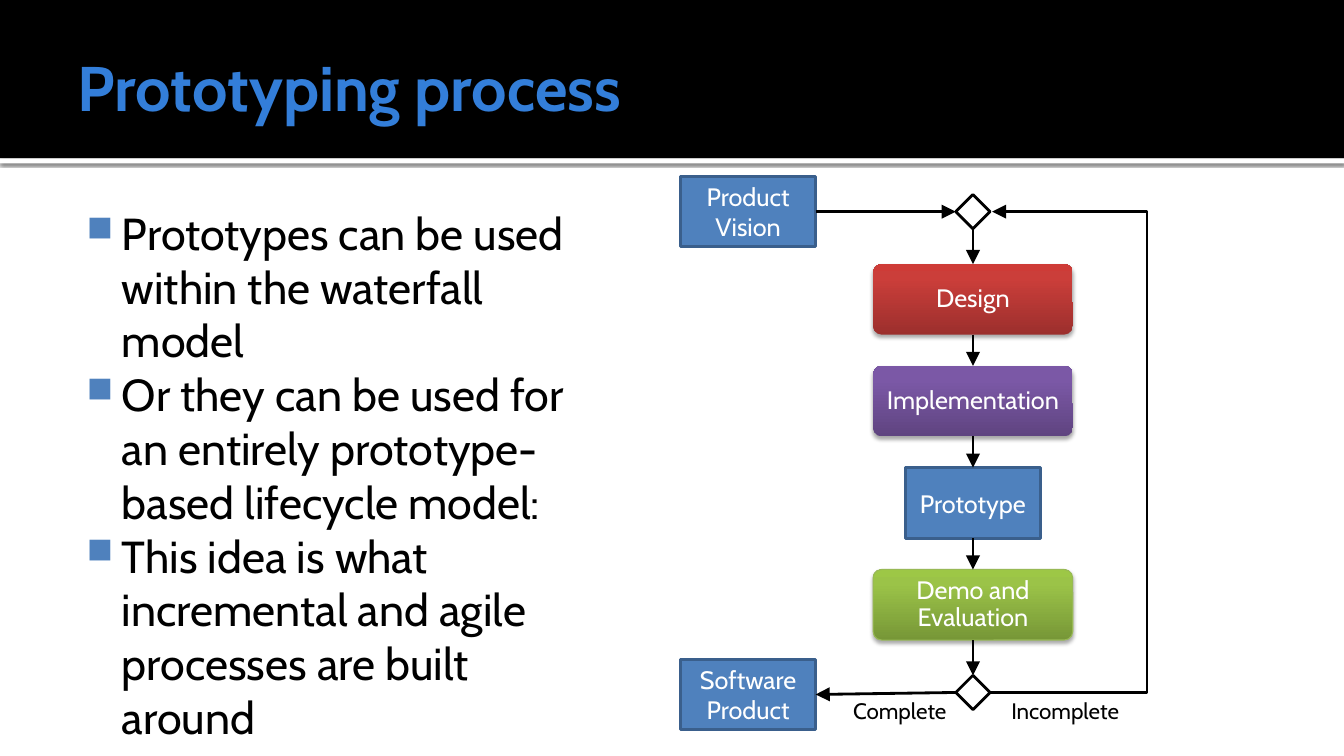
"""Build the prototyping process slide."""
import copy
import lxml.etree
import pptx
import pptx.dml.color
import pptx.enum.shapes
import pptx.enum.text
import pptx.oxml.ns
import pptx.util

RGB = pptx.dml.color.RGBColor
KIND = pptx.enum.shapes.MSO_SHAPE
LINK = pptx.enum.shapes.MSO_CONNECTOR
ALIGN = pptx.enum.text.PP_ALIGN
MIDDLE = pptx.enum.text.MSO_ANCHOR.MIDDLE
qn = pptx.oxml.ns.qn

BLACK = RGB(0, 0, 0)
WHITE = RGB(255, 255, 255)
TITLE = RGB(0x33, 0x7E, 0xD9)
BLUE = RGB(0x4F, 0x81, 0xBD)
NAVY = RGB(0x3A, 0x5F, 0x8C)
LIME = RGB(0x98, 0xB9, 0x55)
REDS = RGB(0x9C, 0x2F, 0x2D), RGB(0xCB, 0x3E, 0x3A), RGB(0xCE, 0x3B, 0x37)
PLUMS = RGB(0x5F, 0x44, 0x80), RGB(0x7B, 0x58, 0xA6), RGB(0x7C, 0x57, 0xA8)
GREENS = RGB(0x77, 0x97, 0x37), RGB(0x9B, 0xC3, 0x48), RGB(0x9D, 0xC7, 0x46)

SCALE = 9144
FONT = "Cabin"
MID = 965
TOP = 262
PITCH = 101
HIGH = 70
TOP_SIDE, LEFT, BOTTOM, RIGHT = range(4)
POINTS = [
    "Prototypes can be used within the waterfall model",
    "Or they can be used for an entirely prototype-based lifecycle model:",
    "This idea is what incremental and agile processes are built around",
]


def px(*sizes):
    """Turn px lengths into EMU."""
    return [size * SCALE for size in sizes]


def add_node(root, tag, **attrs):
    """Append a drawing element with the given attributes."""
    node = lxml.etree.SubElement(root, qn(tag))
    for key, value in attrs.items():
        node.set(key, str(value))
    return node


def add_run(para, text, size, color, bold=False):
    """Add one styled run to a paragraph."""
    run = para.add_run()
    run.text = text
    run.font.name = FONT
    run.font.size = pptx.util.Pt(size)
    run.font.bold = bold
    run.font.color.rgb = color


def fill_text(frame, lines, size, color, align=ALIGN.CENTER):
    """Write one paragraph per line and return the paragraphs."""
    frame.word_wrap = True
    for count, line in enumerate(lines):
        para = frame.add_paragraph() if count else frame.paragraphs[0]
        para.alignment = align
        add_run(para, line, size, color)
    return frame.paragraphs


def add_shadow(shape, alpha, blur, dist):
    """Give a shape a soft shadow that falls downward."""
    effects = shape._element.spPr.find(qn("a:effectLst"))
    outer = add_node(effects, "a:outerShdw", blurRad=pptx.util.Pt(blur),
                     dist=pptx.util.Pt(dist), dir=5400000, algn="ctr", rotWithShape=0)
    color = add_node(outer, "a:srgbClr", val=BLACK)
    add_node(color, "a:alpha", val=alpha * 1000)


def add_box(slide, kind, place, fill, line=None, width=2):
    """Add a flat preset shape."""
    box = slide.shapes.add_shape(kind, *px(*place))
    box.shadow.inherit = False
    box.fill.solid()
    box.fill.fore_color.rgb = fill
    if line is None:
        box.line.fill.background()
    else:
        box.line.color.rgb = line
        box.line.width = pptx.util.Pt(width)
    return box


def add_item(slide, x, y, lines):
    """Add a blue box for a product or prototype."""
    box = add_box(slide, KIND.RECTANGLE, (x, y, 134, HIGH), BLUE, NAVY)
    box.text_frame.vertical_anchor = MIDDLE
    fill_text(box.text_frame, lines, 18, WHITE)
    return box


def add_step(slide, row, text, tones, line=None):
    """Add a shaded, rounded box for a process step."""
    box = add_box(slide, KIND.ROUNDED_RECTANGLE,
                  (MID - 99, TOP + row * PITCH, 198, HIGH), tones[0], line, 0.75)
    box.adjustments[0] = 0.12
    box.fill.gradient()
    box.fill.gradient_angle = 90
    stops = box._element.spPr.find(".//" + qn("a:gsLst"))
    stops.append(copy.deepcopy(stops[-1]))
    for stop, tone, place in zip(box.fill.gradient_stops, tones, (0, 0.8, 1)):
        stop.color.rgb = tone
        stop.position = place
    add_shadow(box, 35, 3.1, 1.8)
    frame = box.text_frame
    frame.vertical_anchor = MIDDLE
    frame.margin_left = frame.margin_right = 6 * SCALE
    frame.margin_top = frame.margin_bottom = 6 * SCALE
    fill_text(frame, [text], 18, WHITE)[0].line_spacing = 0.9
    return box


def add_gate(slide, y):
    """Add a white decision diamond."""
    return add_box(slide, KIND.FLOWCHART_DECISION, (MID - 17, y, 34, 34), WHITE, BLACK)


def add_arrow(slide, kind, ends):
    """Add a black connector with an arrowhead."""
    arrow = slide.shapes.add_connector(kind, *px(*ends))
    arrow.line.color.rgb = BLACK
    arrow.line.width = pptx.util.Pt(2)
    add_node(arrow.line._get_or_add_ln(), "a:tailEnd", type="triangle", w="lg", len="lg")
    add_node(arrow._element.spPr, "a:effectLst")
    return arrow


def join(slide, start, out, end, into):
    """Join two shapes with a straight arrow."""
    arrow = add_arrow(slide, LINK.STRAIGHT, (0, 0, 0, 0))
    arrow.begin_connect(start, out)
    arrow.end_connect(end, into)


def add_loop(slide):
    """Add the bent arrow back to the first decision."""
    loop = add_arrow(slide, LINK.ELBOW, (982, 687, 984, 210))
    guides = loop._element.spPr.find(".//" + qn("a:avLst"))
    reach = (1137 - 982) * 100000 // 2
    add_node(guides, "a:gd", name="adj1", fmla=f"val {reach}")


def add_label(slide, x, text):
    """Add a label beside the last decision."""
    box = slide.shapes.add_textbox(*px(x, 687, 197, 37))
    fill_text(box.text_frame, [text], 16, BLACK)


def add_list(slide):
    """Add the bulleted text on the left."""
    frame = slide.shapes.add_textbox(*px(67, 194, 536, 506)).text_frame
    frame.margin_left, frame.margin_top = px(6, 10)
    for para in fill_text(frame, POINTS, 32, BLACK, ALIGN.LEFT):
        props = para._p.get_or_add_pPr()
        props.set("marL", str(48 * SCALE))
        props.set("indent", str(-35 * SCALE))
        add_node(add_node(props, "a:buClr"), "a:srgbClr", val=BLUE)
        add_node(props, "a:buSzPct", val=80000)
        add_node(props, "a:buChar", char="■")


def add_head(slide):
    """Add the dark band, its white edge and the title."""
    edge = add_box(slide, KIND.RECTANGLE, (0, 157, 1333, 5), WHITE)
    add_shadow(edge, 60, 2.5, 0.8)
    band = add_box(slide, KIND.RECTANGLE, (0, 0, 1333, 157), BLACK)
    title = slide.shapes.title
    band._element.addnext(title._element)
    title.left, title.top, title.width, title.height = px(67, 17, 1200, 137)
    frame = title.text_frame
    frame.vertical_anchor = MIDDLE
    frame.margin_left, frame.margin_right = px(10, 5)
    frame.paragraphs[0].alignment = ALIGN.LEFT
    add_run(frame.paragraphs[0], "Prototyping process", 45, TITLE, True)


def main():
    """Build and save the slide."""
    deck = pptx.Presentation()
    deck.slide_width, deck.slide_height = px(1333, 750)
    slide = deck.slides.add_slide(deck.slide_layouts[5])
    add_head(slide)
    add_list(slide)
    vision = add_item(slide, 675, 175, ["Product", "Vision"])
    final = add_item(slide, 675, 654, ["Software Product"])
    first, last = add_gate(slide, 193), add_gate(slide, 670)
    flow = [
        first,
        add_step(slide, 0, "Design", REDS),
        add_step(slide, 1, "Implementation", PLUMS),
        add_item(slide, MID - 67, TOP + 2 * PITCH, ["Prototype"]),
        add_step(slide, 3, "Demo and Evaluation", GREENS, LIME),
        last,
    ]
    for start, end in zip(flow, flow[1:]):
        join(slide, start, BOTTOM, end, TOP_SIDE)
    join(slide, vision, RIGHT, first, LEFT)
    join(slide, last, LEFT, final, RIGHT)
    add_loop(slide)
    add_label(slide, 794, "Complete")
    add_label(slide, 958, "Incomplete")
    deck.save("out.pptx")


if __name__ == "__main__":
    main()
